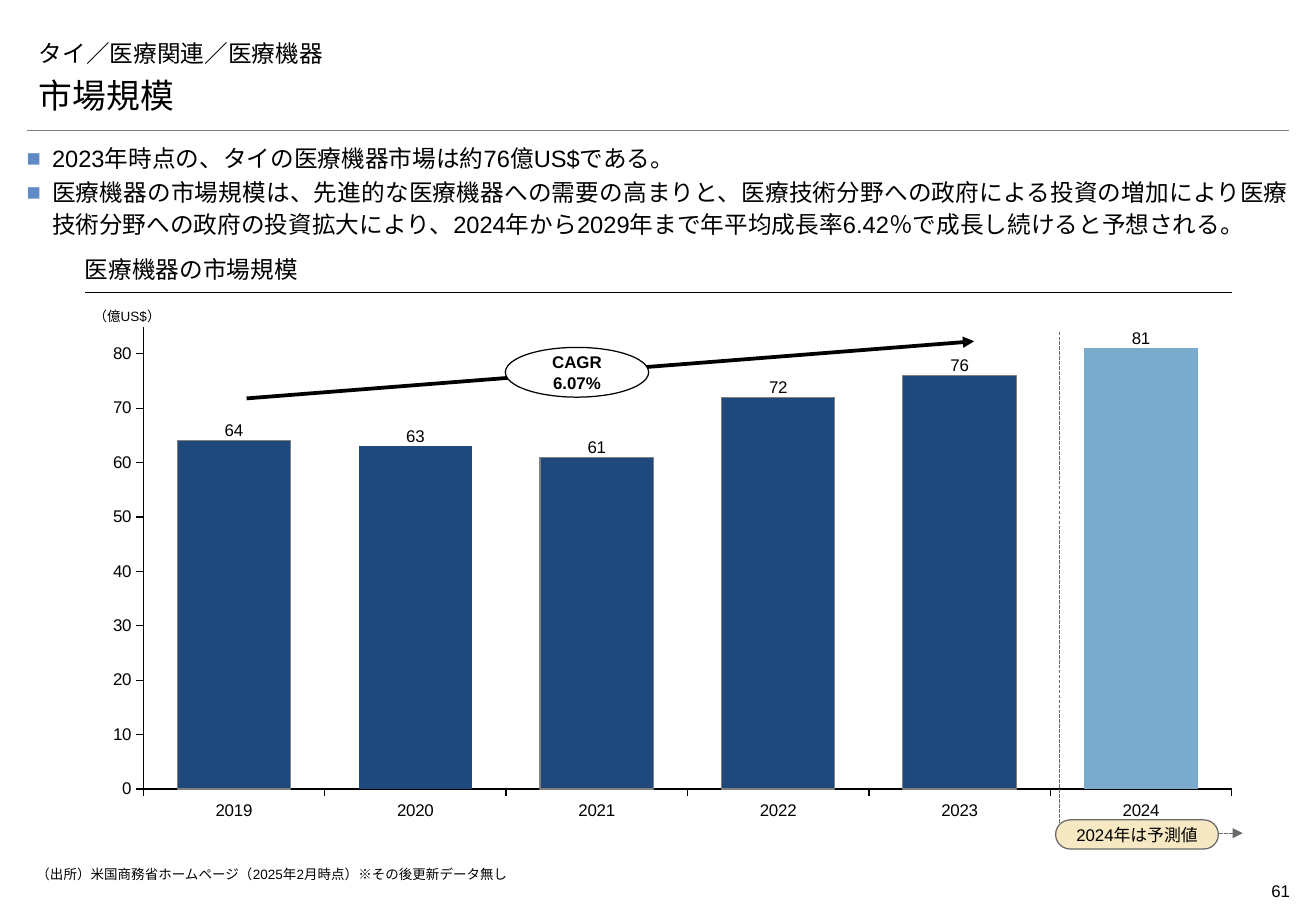
from dataclasses import dataclass

from lxml import etree
from pptx import Presentation
from pptx import util as u
from pptx.chart.data import CategoryChartData
from pptx.dml.color import RGBColor
from pptx.enum import chart as charts, dml, shapes, text
from pptx.oxml.ns import qn

COLORS = {
    "black": "000000", "white": "FFFFFF", "rule": "7F7F7F", "actual": "1F497D",
    "forecast": "7AABCC", "bar_line": "808080", "note_line": "6A6A6A",
    "note_fill": "F6E8C2", "bullet": "5F8AC3",
}
ALIGN = text.PP_ALIGN
ANCHOR = text.MSO_ANCHOR
LIST_INDENT = 15


@dataclass
class Label:
    content: str
    box: tuple[float, float, float, float]
    size: float
    font: str = "Arial"
    align: ALIGN = ALIGN.LEFT
    anchor: ANCHOR = ANCHOR.TOP
    insets: tuple[float, float, float, float] = (0, 0, 0, 0)
    bold: bool = False
    wrap: bool = True


@dataclass
class Badge:
    kind: shapes.MSO_SHAPE
    label: Label
    fill: str
    line: str


@dataclass
class Rule:
    start: tuple[float, float]
    end: tuple[float, float]
    color: str
    width: float
    arrow: bool = False


SIDE_INSETS = (7.2, 3.6, 7.2, 3.6)
TITLE = Label("タイ／医療関連／医療機器", (15.84, 18.72, 748.08, 24.48), 14, "Montserrat",
              anchor=ANCHOR.BOTTOM, insets=SIDE_INSETS)
SUBTITLE = Label("市場規模", (15.84, 40.32, 748.8, 31.68), 20, "Montserrat",
                 anchor=ANCHOR.BOTTOM, insets=SIDE_INSETS)
MESSAGES = Label(
    "2023年時点の、タイの医療機器市場は約76億US$である。\n"
    "医療機器の市場規模は、先進的な医療機器への需要の高まりと、医療技術分野への政府による投資の増加により"
    "医療技術分野への政府の投資拡大により、2024年から2029年まで年平均成長率6.42％で成長し続けると予想される。",
    (15.84, 83.52, 748.08, 56.16), 14, align=ALIGN.JUSTIFY)
TEXTS = [
    Label("61", (707.76, 518.4, 56.88, 19.44), 10, align=ALIGN.RIGHT, insets=(0, 3.6, 0, 3.6)),
    Label("医療機器の市場規模", (50.4, 151.2, 679.68, 22.32), 14, "Montserrat",
          anchor=ANCHOR.BOTTOM, insets=(0, 3.6, 0, 5.76)),
    Label("（億US$）", (55.44, 178.56, 65.52, 17.28), 8, anchor=ANCHOR.MIDDLE),
    Label("（出所）米国商務省ホームページ（2025年2月時点）※その後更新データ無し",
          (21.6, 513.36, 646.56, 11.52), 8),
]
RULES = [
    Rule((15.84, 77), (763.92, 77), "rule", 0.25),
    Rule((50.4, 173.52), (730.08, 173.52), "black", 0.75),
    Rule((146.16, 236.16), (577.44, 202.32), "black", 2.25, True),
]
BADGES = [
    Badge(shapes.MSO_SHAPE.ROUNDED_RECTANGLE,
          Label("2024年は予測値", (625.68, 486, 96.48, 17.28), 10, align=ALIGN.CENTER,
                anchor=ANCHOR.MIDDLE, insets=(2.88, 0, 2.88, 0)), "note_fill", "note_line"),
    Badge(shapes.MSO_SHAPE.OVAL,
          Label("CAGR\n6.07%", (299.52, 205.92, 84.96, 29.52), 10, align=ALIGN.CENTER,
                anchor=ANCHOR.MIDDLE, bold=True, wrap=False), "white", "black"),
]
FORECAST_PATH = [(627.84, 196.56), (627.84, 493.92), (736.56, 493.92)]
CHART_BOX = (66.96, 187.2, 669.6, 298.8)
PLOT_BOX = (83.8, 193.7, 646.3, 275)
LABEL_RAISE = 14.2
MARKET = {"2019": 64, "2020": 63, "2021": 61, "2022": 72, "2023": 76, "2024": 81}


def rgb(name: str) -> RGBColor:
    return RGBColor.from_string(COLORS[name])


def points(values) -> list:
    return [u.Pt(value) for value in values]


def set_line(line, color: str, width: float) -> None:
    line.color.rgb = rgb(color)
    line.width = u.Pt(width)


def add_arrowhead(shape) -> None:
    outline = shape._element.spPr.find(qn("a:ln"))
    etree.SubElement(outline, qn("a:tailEnd"), type="triangle")


def set_bullet(paragraph, bulleted: bool) -> None:
    properties = paragraph._p.get_or_add_pPr()
    indent = u.Pt(LIST_INDENT if bulleted else 0)
    properties.set("marL", str(indent))
    properties.set("indent", str(-indent))
    if bulleted:
        color = etree.SubElement(properties, qn("a:buClr"))
        etree.SubElement(color, qn("a:srgbClr"), val=COLORS["bullet"])
        etree.SubElement(properties, qn("a:buChar"), char="■")
    else:
        etree.SubElement(properties, qn("a:buNone"))


def write_label(shape, label: Label) -> None:
    frame = shape.text_frame
    frame.text = label.content
    frame.auto_size = text.MSO_AUTO_SIZE.NONE
    frame.word_wrap = label.wrap
    frame.vertical_anchor = label.anchor
    (frame.margin_left, frame.margin_top,
     frame.margin_right, frame.margin_bottom) = points(label.insets)
    for paragraph in frame.paragraphs:
        paragraph.alignment = label.align
        if shape.is_placeholder:
            set_bullet(paragraph, label is MESSAGES)
            paragraph.space_before = u.Pt(0)
        if label is MESSAGES:
            paragraph.line_spacing = 1.1
            paragraph.space_after = u.Pt(2)
        paragraph.font.name = label.font
        paragraph.font.size = u.Pt(label.size)
        paragraph.font.bold = label.bold
        paragraph.font.color.rgb = rgb("black")


def fill_placeholder(placeholder, label: Label) -> None:
    (placeholder.left, placeholder.top,
     placeholder.width, placeholder.height) = points(label.box)
    write_label(placeholder, label)


def add_rule(slide, rule: Rule) -> None:
    connector = slide.shapes.add_connector(
        shapes.MSO_CONNECTOR.STRAIGHT, *points(rule.start + rule.end))
    set_line(connector.line, rule.color, rule.width)
    if rule.arrow:
        add_arrowhead(connector)
    etree.SubElement(connector._element.spPr, qn("a:effectLst"))


def add_badge(slide, badge: Badge) -> None:
    shape = slide.shapes.add_shape(badge.kind, *points(badge.label.box))
    shape.shadow.inherit = False
    if badge.kind == shapes.MSO_SHAPE.ROUNDED_RECTANGLE:
        shape.adjustments[0] = 0.5
    shape.fill.solid()
    shape.fill.fore_color.rgb = rgb(badge.fill)
    set_line(shape.line, badge.line, 0.75)
    write_label(shape, badge.label)


def add_forecast_path(slide) -> None:
    start, *corners = [points(corner) for corner in FORECAST_PATH]
    builder = slide.shapes.build_freeform(*start)
    builder.add_line_segments(corners, close=False)
    shape = builder.convert_to_shape()
    shape.shadow.inherit = False
    shape.fill.background()
    set_line(shape.line, "note_line", 0.75)
    shape.line.dash_style = dml.MSO_LINE.SQUARE_DOT
    add_arrowhead(shape)


def add_layout(parent, index: int, values: dict) -> None:
    for old in parent.findall(qn("c:layout")):
        parent.remove(old)
    layout = etree.Element(qn("c:layout"))
    manual = etree.SubElement(layout, qn("c:manualLayout"))
    for tag, value in values.items():
        etree.SubElement(manual, qn(f"c:{tag}"), val=str(value))
    parent.insert(index, layout)


def add_market_chart(slide) -> None:
    data = CategoryChartData()
    data.categories = list(MARKET)
    data.add_series("Series 1", list(MARKET.values()))
    chart = slide.shapes.add_chart(
        charts.XL_CHART_TYPE.COLUMN_STACKED, *points(CHART_BOX), data).chart
    chart.has_legend = chart.has_title = False
    chart.font.name = "Arial"
    chart.font.size = u.Pt(10)
    chart.font.color.rgb = rgb("black")
    for axis in (chart.category_axis, chart.value_axis):
        axis.has_major_gridlines = False
        axis.major_tick_mark = charts.XL_TICK_MARK.OUTSIDE
        set_line(axis.format.line, "black", 0.75)
    chart.value_axis.minimum_scale = 0
    chart.value_axis.maximum_scale = 85
    chart.value_axis.major_unit = 10
    left, top, width, height = CHART_BOX
    plot_left, plot_top, plot_width, plot_height = PLOT_BOX
    add_layout(chart._chartSpace.chart.plotArea, 0, {
        "layoutTarget": "inner", "xMode": "edge", "yMode": "edge",
        "x": (plot_left - left) / width, "y": (plot_top - top) / height,
        "w": plot_width / width, "h": plot_height / height})

    plot = chart.plots[0]
    plot.gap_width, plot.overlap, plot.vary_by_categories = 60, 100, False
    series = plot.series[0]
    series.format.fill.solid()
    series.format.fill.fore_color.rgb = rgb("actual")
    set_line(series.format.line, "bar_line", 0.75)
    for index, color in {1: "actual", 5: "forecast"}.items():
        bar = series.points[index].format
        bar.fill.solid()
        bar.fill.fore_color.rgb = rgb(color)
        bar.line.fill.background()
    series.data_labels.show_value = True
    series.data_labels.position = charts.XL_LABEL_POSITION.INSIDE_END
    for index in range(len(MARKET)):
        series.points[index].data_label.position = charts.XL_LABEL_POSITION.INSIDE_END
    for element in series.data_labels._element.findall(qn("c:dLbl")):
        add_layout(element, 1, {"x": 0, "y": -LABEL_RAISE / height})


def main() -> None:
    presentation = Presentation()
    presentation.slide_width, presentation.slide_height = points((780, 540))
    slide = presentation.slides.add_slide(presentation.slide_layouts[3])
    for placeholder, label in zip(slide.placeholders, (TITLE, SUBTITLE, MESSAGES)):
        fill_placeholder(placeholder, label)
    for label in TEXTS:
        write_label(slide.shapes.add_textbox(*points(label.box)), label)
    add_market_chart(slide)
    add_forecast_path(slide)
    for rule in RULES:
        add_rule(slide, rule)
    for badge in BADGES:
        add_badge(slide, badge)
    presentation.save("out.pptx")


if __name__ == "__main__":
    main()
